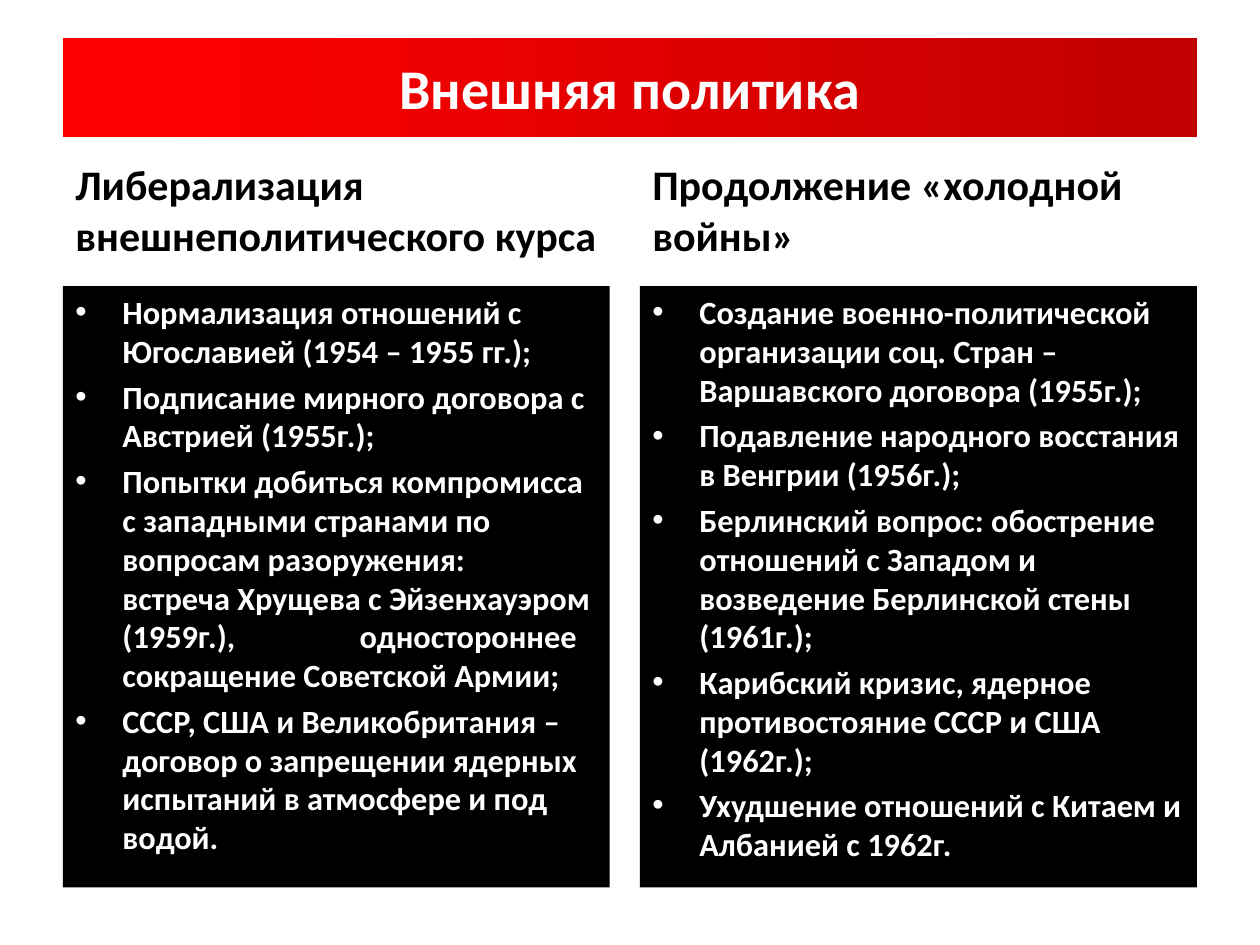
"""Slide on Soviet foreign policy: a title band over two headed columns."""
from lxml.etree import SubElement
from pptx import Presentation
from pptx.dml.color import RGBColor
from pptx.enum.text import MSO_ANCHOR, PP_ALIGN
from pptx.oxml.ns import qn
from pptx.util import Cm, Pt

COLS = [
    (12.9, 11.02, "Либерализация внешнеполитического курса", [
        "Нормализация отношений с Югославией (1954 – 1955 гг.);",
        "Подписание мирного договора с Австрией (1955г.);",
        "Попытки добиться компромисса с западными странами по вопросам "
        "разоружения:\vвстреча Хрущева с Эйзенхауэром (1959г.),\t"
        "одностороннее сокращение Советской Армии;",
        "СССР, США и Великобритания – договор о запрещении ядерных "
        "испытаний в атмосфере и под водой.",
    ]),
    (1.27, 11.23, "Продолжение «холодной войны»", [
        "Создание военно-политической организации соц. Стран – "
        "Варшавского договора (1955г.);",
        "Подавление народного восстания в Венгрии (1956г.);",
        "Берлинский вопрос: обострение отношений с Западом и возведение "
        "Берлинской стены (1961г.);",
        "Карибский кризис, ядерное противостояние СССР и США (1962г.);",
        "Ухудшение отношений с Китаем и Албанией с 1962г.",
    ]),
]


class Deck:
    """Holds the style and the current slide."""

    hues = {"red": "FF0000", "dark": "C00000", "ink": "000000", "pale": "FFFFFF"}

    def __init__(self):
        """Open a deck with one title-only slide."""
        self.prs = Presentation()
        self.prs.slide_width, self.prs.slide_height = Cm(25.4), Cm(19.05)
        self.slide = self.prs.slides.add_slide(self.prs.slide_layouts[5])

    def hue(self, name):
        """Return a named colour."""
        return RGBColor.from_string(self.hues[name])

    def style(self, para, size, name):
        """Set the font of a paragraph."""
        for key, val in {"name": "Calibri", "size": Pt(size), "bold": True}.items():
            setattr(para.font, key, val)
        para.font.color.rgb = self.hue(name)

    def title(self, text, *box):
        """Place the title on a gradient band."""
        shape = self.slide.shapes.title
        for key, val in zip(("left", "top", "width", "height"), box):
            setattr(shape, key, Cm(val))
        shape.fill.gradient()
        shape.fill.gradient_angle = 0
        for stop, name, pos in zip(shape.fill.gradient_stops, ("red", "dark"), (0.07, 1)):
            stop.color.rgb, stop.position = self.hue(name), pos
        frame = shape.text_frame
        frame.text, frame.vertical_anchor = text, MSO_ANCHOR.MIDDLE
        frame.paragraphs[0].alignment = PP_ALIGN.CENTER
        self.style(frame.paragraphs[0], 32, "pale")

    def box(self, *box):
        """Add a wrapping text box."""
        shape = self.slide.shapes.add_textbox(*map(Cm, box))
        shape.text_frame.word_wrap = True
        return shape

    def head(self, text, *box):
        """Add a column heading."""
        frame = self.box(*box).text_frame
        frame.text, frame.vertical_anchor = text, MSO_ANCHOR.BOTTOM
        self.style(frame.paragraphs[0], 24, "ink")

    def panel(self, items, *box):
        """Add a dark panel of bulleted items."""
        shape = self.box(*box)
        shape.fill.solid()
        shape.fill.fore_color.rgb = self.hue("ink")
        frame = shape.text_frame
        for i, item in enumerate(items):
            para = frame.add_paragraph() if i else frame.paragraphs[0]
            para.text = item
            para.space_before = Pt(3.7 if i else 0)
            self.bullet(para)
            self.style(para, 18.5, "pale")

    def bullet(self, para):
        """Give a paragraph a hanging bullet and a tab stop."""
        props = para._p.get_or_add_pPr()
        props.set("marL", str(Cm(0.95)))
        props.set("indent", str(-Cm(0.95)))
        SubElement(props, qn("a:buFont"), typeface="Arial")
        SubElement(props, qn("a:buChar"), char="•")
        tabs = SubElement(props, qn("a:tabLst"))
        SubElement(tabs, qn("a:tab"), pos=str(Cm(5.73)), algn="l")


def main():
    """Build and save the slide."""
    deck = Deck()
    deck.title("Внешняя политика", 1.27, 0.76, 22.86, 2.01)
    for left, (_, wide, head, items) in zip((1.27, 12.9), COLS):
        deck.head(head, left, 3.18, 11.23, 2.18)
        deck.panel(items, left, 5.77, wide, 12.12)
    deck.prs.save("out.pptx")


if __name__ == "__main__":
    main()
